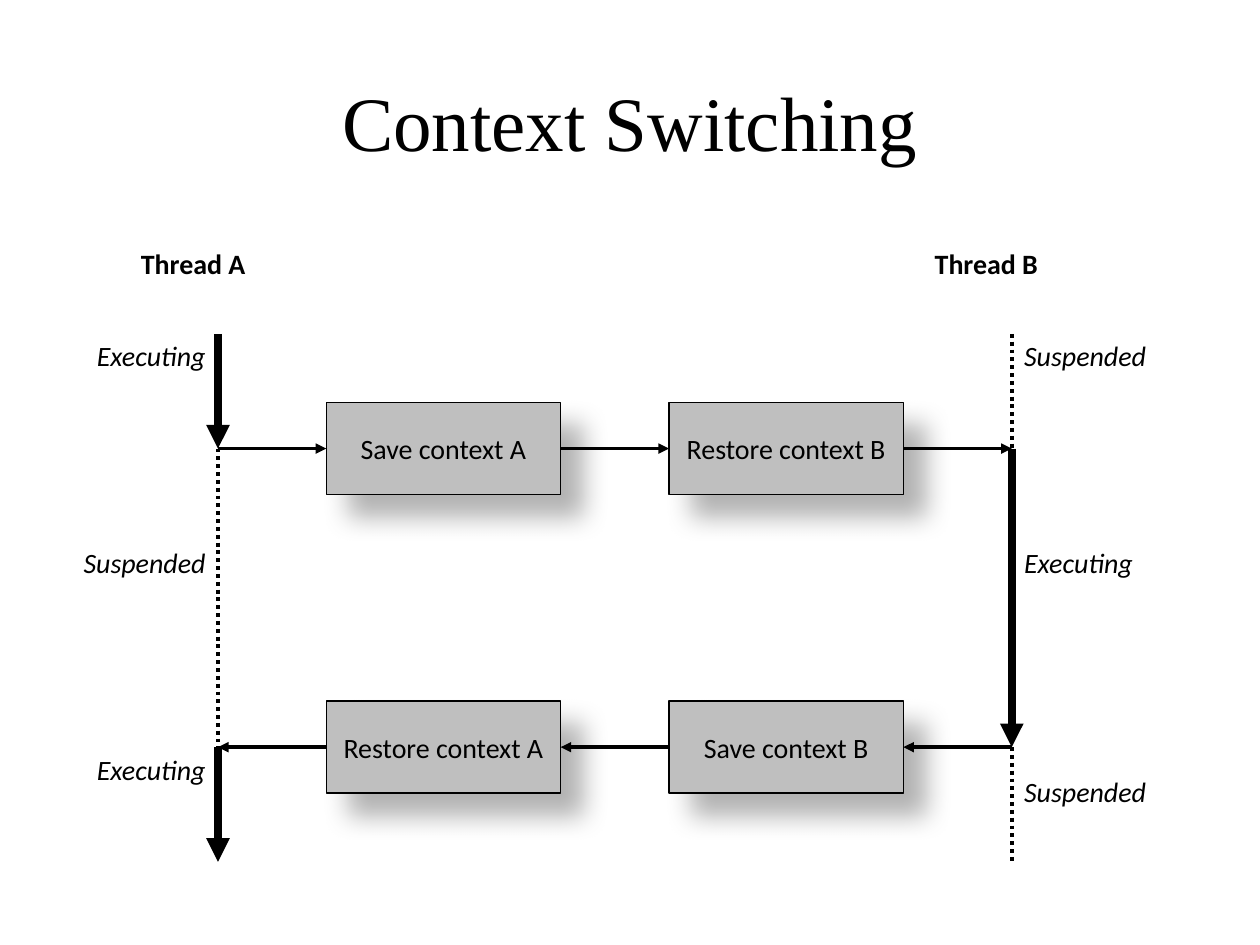
from lxml.etree import SubElement
from pptx import Presentation
from pptx.dml.color import RGBColor
from pptx.enum.dml import MSO_LINE
from pptx.enum.shapes import MSO_CONNECTOR, MSO_SHAPE
from pptx.enum.text import MSO_ANCHOR, PP_ALIGN
from pptx.oxml.ns import qn
from pptx.util import Inches, Pt

COLORS = {"ink": "000000", "box": "BFBFBF"}
INK = RGBColor.from_string(COLORS["ink"])

# Grid: two thread lanes with two boxes and three equal gaps between them
LANE_A, LANE_B = 1.73, 8.03
BOX_W, BOX_H = 1.86, 0.73
GAP = (LANE_B - LANE_A - 2 * BOX_W) / 3
BOX_LEFTS = [LANE_A + GAP, LANE_A + 2 * GAP + BOX_W]
START, SWITCH_TO_B, SWITCH_TO_A, END = 2.65, 3.56, 5.93, 6.84
LABEL_W, LABEL_H = 1.43, 0.55

prs = Presentation()
prs.slide_width, prs.slide_height = Inches(10), Inches(7.5)
slide = prs.slides.add_slide(prs.slide_layouts[5])


def write(frame, text, align, size=16, font="Calibri", bold=False, italic=False):
    frame.text = text
    frame.word_wrap = True
    paragraph = frame.paragraphs[0]
    paragraph.alignment = align
    style = paragraph.runs[0].font
    style.name, style.size = font, Pt(size)
    style.bold, style.italic = bold, italic
    style.color.rgb = INK


def draw_line(start, end, width, arrow=True):
    line = slide.shapes.add_connector(
        MSO_CONNECTOR.STRAIGHT, *(Inches(v) for v in (*start, *end)))
    line.line.color.rgb = INK
    line.line.width = Pt(width)
    if arrow:
        SubElement(line.line._get_or_add_ln(), qn("a:tailEnd"), type="triangle")
    else:
        line.line.dash_style = MSO_LINE.ROUND_DOT
    SubElement(line._element.spPr, qn("a:effectLst"))
    return line


# Title
title = slide.shapes.title
title.left, title.top = Inches(0.75), Inches(0.33)
title.width, title.height = Inches(8.5), Inches(1.25)
title.text_frame.vertical_anchor = MSO_ANCHOR.MIDDLE
write(title.text_frame, "Context Switching", PP_ALIGN.CENTER, 44, "Times New Roman")

# Thread lanes: dotted while suspended, thick arrow while executing
for lane, top, bottom in [(LANE_A, SWITCH_TO_B, SWITCH_TO_A),
                          (LANE_B, START, SWITCH_TO_B),
                          (LANE_B, SWITCH_TO_A, END)]:
    draw_line((lane, top), (lane, bottom), 2.25, arrow=False)
for lane, top, bottom in [(LANE_A, START, SWITCH_TO_B),
                          (LANE_B, SWITCH_TO_B, SWITCH_TO_A),
                          (LANE_A, SWITCH_TO_A, END)]:
    draw_line((lane, top), (lane, bottom), 4.5)

# Thread headings and state labels
for lane, heading, align, states in [
    (LANE_A, "Thread A", PP_ALIGN.RIGHT,
     [(2.64, "Executing"), (4.28, "Suspended"), (5.92, "Executing")]),
    (LANE_B, "Thread B", PP_ALIGN.LEFT,
     [(2.64, "Suspended"), (4.28, "Executing"), (6.1, "Suspended")]),
]:
    heading_box = slide.shapes.add_textbox(
        Inches(lane - 0.71), Inches(1.91), Inches(1.29), Inches(LABEL_H))
    write(heading_box.text_frame, heading, PP_ALIGN.LEFT, bold=True)
    label_left = lane - LABEL_W if align == PP_ALIGN.RIGHT else lane
    for top, state in states:
        state_box = slide.shapes.add_textbox(
            Inches(label_left), Inches(top), Inches(LABEL_W), Inches(LABEL_H))
        write(state_box.text_frame, state, align, italic=True)

# Switch rows: boxes from left to right, arrows in the direction of the switch
for y, to_right, steps in [
    (SWITCH_TO_B, True, ["Save context A", "Restore context B"]),
    (SWITCH_TO_A, False, ["Restore context A", "Save context B"]),
]:
    boxes = []
    for left, step in zip(BOX_LEFTS, steps):
        box = slide.shapes.add_shape(
            MSO_SHAPE.RECTANGLE, Inches(left), Inches(y - BOX_H / 2),
            Inches(BOX_W), Inches(BOX_H))
        box.fill.solid()
        box.fill.fore_color.rgb = RGBColor.from_string(COLORS["box"])
        box.line.color.rgb = INK
        box.line.width = Pt(0.75)
        box.text_frame.vertical_anchor = MSO_ANCHOR.MIDDLE
        write(box.text_frame, step, PP_ALIGN.CENTER)

        # Soft shadow to the lower right
        box.shadow.inherit = False
        effects = box._element.spPr.find(qn("a:effectLst"))
        shadow = SubElement(effects, qn("a:outerShdw"), blurRad=str(Pt(15)),
                            dist=str(Pt(18)), dir=str(45 * 60000),
                            algn="tl", rotWithShape="0")
        tint = SubElement(shadow, qn("a:srgbClr"), val=COLORS["ink"])
        SubElement(tint, qn("a:alpha"), val="30000")
        boxes.append(box)

    first, last = boxes if to_right else boxes[::-1]
    entry, leave = (1, 3) if to_right else (3, 1)
    origin, target = (LANE_A, LANE_B) if to_right else (LANE_B, LANE_A)
    for source, sink in [(None, first), (first, last), (last, None)]:
        arrow = draw_line((origin, y), (target, y), 2)
        if source is not None:
            arrow.begin_connect(source, leave)
        if sink is not None:
            arrow.end_connect(sink, entry)

prs.save("out.pptx")
